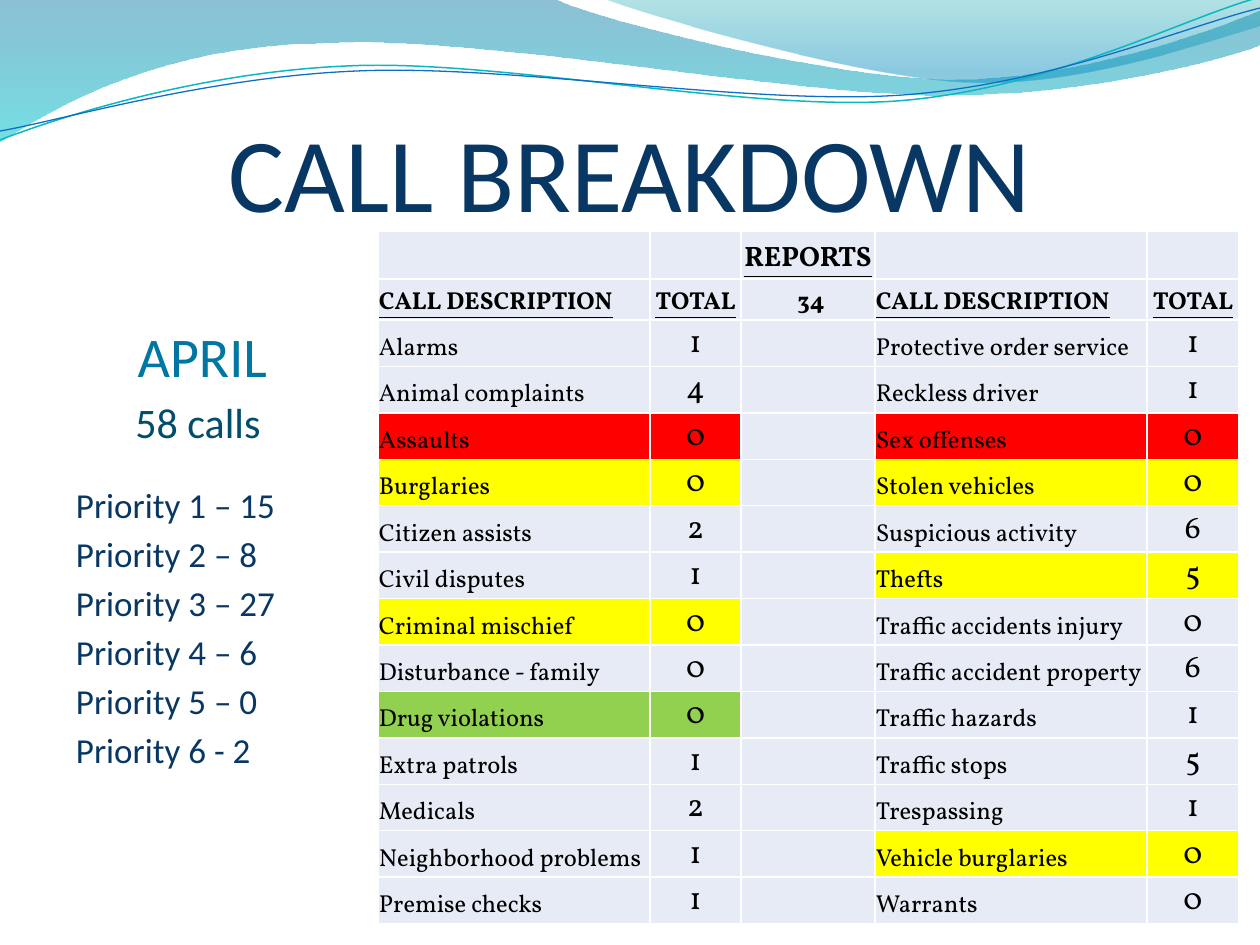
"""Build the April call breakdown slide with its table of calls."""
import dataclasses
import math
import typing

import lxml.etree
import pptx
import pptx.dml.color
import pptx.enum.text
import pptx.oxml.ns
import pptx.util

EMU_PER_PX = 914400 / 126
PLAIN, RED, YELLOW, GREEN = "E7EBF5", "FF0000", "FFFF00", "92D050"
Align = pptx.enum.text.PP_ALIGN
Anchor = pptx.enum.text.MSO_ANCHOR
qn = pptx.oxml.ns.qn
Point = tuple[int, int]


@dataclasses.dataclass(frozen=True)
class Theme:
    sans: str = "Calibri"
    serif: str = "Vollkorn"
    navy: str = "083763"
    month: str = "0076A3"
    calls: str = "004E6C"
    ink: str = "000000"
    border: str = "FFFFFF"
    title_size: int = 60
    month_size: int = 32
    calls_size: int = 24
    priority_size: int = 20
    total_size: int = 18
    reports_size: int = 16
    cell_size: int = 14


class Stop(typing.NamedTuple):
    position: float
    color: str
    opacity: int


class Wave(typing.NamedTuple):
    start: Point
    segments: list[tuple[Point, ...]]
    stops: tuple[Stop, ...] = ()
    line_color: str = ""
    line_width: float = 0
    center: Point = (0, 0)
    rotation: float = 0


class Line(typing.NamedTuple):
    text: str
    size: int
    color: str
    align: Align
    space_before: float
    indent: int = 0


class Call(typing.NamedTuple):
    description: str
    total: int
    fill: str = PLAIN


THEME = Theme()

WAVES = [
    Wave((0, 0), [((554, -1),),
                  ((600, 21), (837, 79), (955, 79)),
                  ((1075, 79), (1207, 33), (1260, 11)),
                  ((1261, 45),),
                  ((1237, 55), (1096, 96), (940, 95)),
                  ((784, 95), (481, 35), (324, 43)),
                  ((163, 45), (58, 105), (-1, 142)),
                  ((0, 0),)],
         stops=(Stop(0, "0074A1", 45), Stop(1, "00C6CF", 55))),
    Wave((604, -1), [((641, 14), (859, 78), (969, 82)),
                     ((1079, 87), (1211, 40), (1260, 26)),
                     ((1260, 0),), ((604, -1),)],
         stops=(Stop(0, "00A1A9", 30), Stop(0.8, "008BBF", 45))),
    Wave((0, 140), [((60, 117), (199, 72), (349, 66)),
                    ((498, 59), (747, 112), (898, 101)),
                    ((1050, 89), (1182, 19), (1257, -2))],
         line_color="0AB8BF", line_width=0.85, center=(629, 72), rotation=357.3),
    Wave((0, 131), [((59, 121), (207, 77), (357, 71)),
                    ((508, 64), (752, 106), (903, 95)),
                    ((1053, 84), (1186, 26), (1260, 8))],
         line_color="0F6FC6", line_width=0.75, center=(629, 74), rotation=357.3),
]

PRIORITIES = ["Priority 1 – 15", "Priority 2 – 8", "Priority 3 – 27",
              "Priority 4 – 6", "Priority 5 – 0", "Priority 6 - 2"]

LEFT_CALLS = [
    Call("Alarms", 1), Call("Animal complaints", 4), Call("Assaults", 0, RED),
    Call("Burglaries", 0, YELLOW), Call("Citizen assists", 2),
    Call("Civil disputes", 1), Call("Criminal mischief", 0, YELLOW),
    Call("Disturbance - family", 0), Call("Drug violations", 0, GREEN),
    Call("Extra patrols", 1), Call("Medicals", 2),
    Call("Neighborhood problems", 1), Call("Premise checks", 1),
]
RIGHT_CALLS = [
    Call("Protective order service", 1), Call("Reckless driver", 1),
    Call("Sex offenses", 0, RED), Call("Stolen vehicles", 0, YELLOW),
    Call("Suspicious activity", 6), Call("Thefts", 5, YELLOW),
    Call("Traffic accidents injury", 0), Call("Traffic accident property", 6),
    Call("Traffic hazards", 1), Call("Traffic stops", 5),
    Call("Trespassing", 1), Call("Vehicle burglaries", 0, YELLOW),
    Call("Warrants", 0),
]


def px(length: float) -> pptx.util.Emu:
    return pptx.util.Emu(round(length * EMU_PER_PX))


def rgb(color: str) -> pptx.dml.color.RGBColor:
    return pptx.dml.color.RGBColor.from_string(color)


def unrotate(point: Point, wave: Wave) -> tuple[int, int]:
    angle = math.radians(-wave.rotation)
    dx, dy = point[0] - wave.center[0], point[1] - wave.center[1]
    return (px(wave.center[0] + dx * math.cos(angle) - dy * math.sin(angle)),
            px(wave.center[1] + dx * math.sin(angle) + dy * math.cos(angle)))


def draw_wave(slide, wave: Wave) -> None:
    builder = slide.shapes.build_freeform(*unrotate(wave.start, wave))
    builder.add_line_segments([unrotate(point, wave) for segment in wave.segments
                               for point in segment], close=bool(wave.stops))
    ribbon = builder.convert_to_shape()
    straight = iter(list(ribbon.element.iter(qn("a:lnTo"))))
    for segment in wave.segments:
        legs = [next(straight) for _ in segment]
        if len(legs) == 3:
            curve = lxml.etree.Element(qn("a:cubicBezTo"))
            legs[0].addprevious(curve)
            for leg in legs:
                curve.append(leg[0])
                leg.getparent().remove(leg)
    ribbon.rotation = wave.rotation
    ribbon.shadow.inherit = False
    if not wave.stops:
        ribbon.fill.background()
        ribbon.line.color.rgb = rgb(wave.line_color)
        ribbon.line.width = pptx.util.Pt(wave.line_width)
        return
    ribbon.line.fill.background()
    ribbon.fill.gradient()
    ribbon.fill.gradient_angle = 270
    for target, stop in zip(ribbon.fill.gradient_stops, wave.stops):
        target.position = stop.position
        target.color.rgb = rgb(stop.color)
    for color, stop in zip(ribbon.element.iter(qn("a:srgbClr")), wave.stops):
        lxml.etree.SubElement(color, qn("a:alpha"), val=str(stop.opacity * 1000))


def style(paragraph, font: str, size: int, color: str, align: Align,
          heading: bool = False, underline: bool = False) -> None:
    paragraph.alignment = align
    for run in paragraph.runs:
        run.font.name = font
        run.font.size = pptx.util.Pt(size)
        run.font.color.rgb = rgb(color)
        run.font.bold = heading
        run.font.underline = underline


def draw_text(slide, box: tuple[int, ...], insets: tuple[int, ...],
              anchor: Anchor, lines: list[Line]) -> None:
    frame = slide.shapes.add_textbox(*map(px, box)).text_frame
    frame.word_wrap = True
    frame.vertical_anchor = anchor
    (frame.margin_left, frame.margin_top,
     frame.margin_right, frame.margin_bottom) = map(px, insets)
    frame.text = "\n".join(line.text for line in lines)
    for paragraph, line in zip(frame.paragraphs, lines):
        paragraph.space_before = pptx.util.Pt(line.space_before)
        paragraph._p.get_or_add_pPr().set("marL", str(px(line.indent)))
        style(paragraph, THEME.sans, line.size, line.color, line.align)


def fill_cell(cell, text: str, fill: str, size: int, align: Align,
              heading: bool = False, underline: bool = False) -> None:
    cell.margin_left = cell.margin_right = cell.margin_top = px(1)
    cell.margin_bottom = 0
    cell.vertical_anchor = Anchor.BOTTOM
    cell.text_frame.text = text
    style(cell.text_frame.paragraphs[0], THEME.serif, size, THEME.ink, align, heading, underline)
    properties = cell._tc.get_or_add_tcPr()
    for side in ("lnL", "lnR", "lnT", "lnB"):
        edge = lxml.etree.SubElement(properties, qn(f"a:{side}"), w=str(pptx.util.Pt(1)))
        paint = lxml.etree.SubElement(edge, qn("a:solidFill"))
        lxml.etree.SubElement(paint, qn("a:srgbClr"), val=THEME.border)
    cell.fill.solid()
    cell.fill.fore_color.rgb = rgb(fill)


def draw_calls(slide) -> None:
    widths = [272, 91, 134, 272, 92]
    heights = [48, 41] + [604 / 13] * len(LEFT_CALLS)
    table = slide.shapes.add_table(len(heights), len(widths), px(378), px(231),
                                   px(sum(widths)), px(sum(heights))).table
    table.first_row = table.horz_banding = False
    for column, width in zip(table.columns, widths):
        column.width = px(width)
    for row, height in zip(table.rows, heights):
        row.height = px(height)
    aligns = [Align.LEFT, Align.CENTER, Align.CENTER, Align.LEFT, Align.CENTER]
    headings = [["", "", "REPORTS", "", ""],
                ["CALL DESCRIPTION", "TOTAL", "34", "CALL DESCRIPTION", "TOTAL"]]
    for r, (texts, size) in enumerate(zip(headings, (THEME.reports_size, THEME.cell_size))):
        for c, text in enumerate(texts):
            fill_cell(table.cell(r, c), text, PLAIN, size, aligns[c], True, text != "34")
    table.cell(1, 2).margin_left = px(7)
    for r, (left, right) in enumerate(zip(LEFT_CALLS, RIGHT_CALLS), start=len(headings)):
        fill_cell(table.cell(r, 2), "", PLAIN, THEME.cell_size, aligns[2])
        for c, call in ((0, left), (3, right)):
            fill_cell(table.cell(r, c), call.description, call.fill, THEME.cell_size, aligns[c])
            fill_cell(table.cell(r, c + 1), str(call.total), call.fill,
                      THEME.total_size, aligns[c + 1])


def main() -> None:
    deck = pptx.Presentation()
    deck.slide_width, deck.slide_height = px(1260), px(945)
    slide = deck.slides.add_slide(deck.slide_layouts[6])
    for wave in WAVES:
        draw_wave(slide, wave)
    draw_text(slide, (63, 95, 1134, 139), (0, 6, 0, 0), Anchor.BOTTOM,
              [Line("CALL BREAKDOWN", THEME.title_size, THEME.navy, Align.CENTER, 0)])
    summary = [Line("APRIL", THEME.month_size, THEME.month, Align.CENTER, 6.4, 37),
               Line("58 calls", THEME.calls_size, THEME.calls, Align.CENTER, 4.8, 28)]
    summary += [Line(text, THEME.priority_size, THEME.navy, Align.LEFT, 4 if i else 21, 126)
                for i, text in enumerate(PRIORITIES)]
    draw_text(slide, (-63, 315, 494, 611), (13, 6, 13, 6), Anchor.TOP, summary)
    draw_calls(slide)
    deck.save("out.pptx")


if __name__ == "__main__":
    main()
